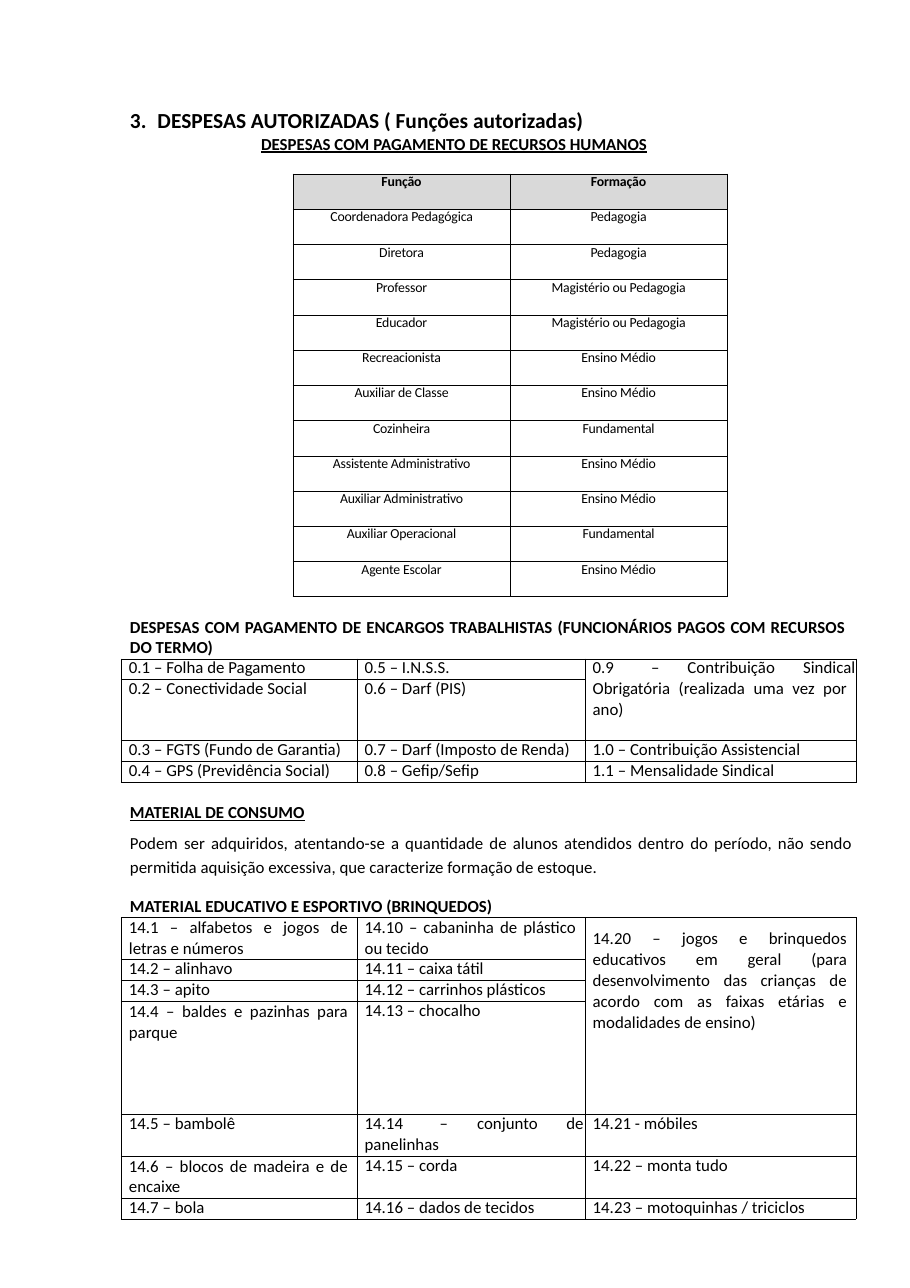
from lxml import etree
from pptx import Presentation
from pptx.dml.color import RGBColor
from pptx.enum.text import PP_ALIGN
from pptx.oxml.ns import qn
from pptx.util import Pt

EMU_PER_PX = 9144  # 100 px to the inch
LEFT, CENTER, JUSTIFY = PP_ALIGN.LEFT, PP_ALIGN.CENTER, PP_ALIGN.JUSTIFY
COLORS = {"text": "000000", "border": "000000", "header": "D9D9D9"}
FONT = "Calibri"
BORDER_WIDTH = Pt(0.5)

STAFF = [
    ("Função", "Formação"),
    ("Coordenadora Pedagógica", "Pedagogia"),
    ("Diretora", "Pedagogia"),
    ("Professor", "Magistério ou Pedagogia"),
    ("Educador", "Magistério ou Pedagogia"),
    ("Recreacionista", "Ensino Médio"),
    ("Auxiliar de Classe", "Ensino Médio"),
    ("Cozinheira", "Fundamental"),
    ("Assistente Administrativo", "Ensino Médio"),
    ("Auxiliar Administrativo", "Ensino Médio"),
    ("Auxiliar Operacional", "Fundamental"),
    ("Agente Escolar", "Ensino Médio"),
]

# A cell is a string, None when merged into the cell above,
# or a list of (text, format) paragraphs.
JUSTIFIED = {"align": JUSTIFY, "right": 8, "line": Pt(13.5)}
CHARGES = [
    ("0.1 – Folha de Pagamento", "0.5 – I.N.S.S.",
     [("0.9\t–\tContribuição\tSindical", {"tabs": (53, 86, 191)}),
      ("Obrigatória (realizada uma vez por ano)", JUSTIFIED)]),
    ("0.2 – Conectividade Social", "0.6 – Darf (PIS)", None),
    ("0.3 – FGTS (Fundo de Garantia)", "0.7 – Darf (Imposto de Renda)",
     "1.0 – Contribuição Assistencial"),
    ("0.4 – GPS (Previdência Social)", "0.8 – Gefip/Sefip",
     "1.1 – Mensalidade Sindical"),
]
TOYS = [
    ([("14.1 – alfabetos e jogos de letras e números", JUSTIFIED)],
     [("14.10 – cabaninha de plástico ou tecido", JUSTIFIED)],
     [("14.20 – jogos e brinquedos educativos em geral (para desenvolvimento "
       "das crianças de acordo com as faixas etárias e modalidades de ensino)",
       {**JUSTIFIED, "line": 1.02})]),
    ("14.2 – alinhavo", "14.11 – caixa tátil", None),
    ("14.3 – apito", "14.12 – carrinhos plásticos", None),
    ([("14.4 – baldes e pazinhas para parque", JUSTIFIED)],
     "14.13 – chocalho", None),
    ("14.5 – bambolê",
     [("14.14\t–\tconjunto\tde", {"tabs": (68, 102, 183)}),
      ("panelinhas", {"line": 1.0})],
     "14.21 - móbiles"),
    ([("14.6 – blocos de madeira e de encaixe", JUSTIFIED)],
     "14.15 – corda", "14.22 – monta tudo"),
    ("14.7 – bola", "14.16 – dados de tecidos", "14.23 – motoquinhas / triciclos"),
]


def px(length):
    return length * EMU_PER_PX


def add_para(frame, text, size=11, bold=False, underline=False, align=LEFT,
             left=0, right=0, line=None, before=None, spacing=0, tabs=()):
    """Fill the first paragraph of a frame if it is empty, else append one."""
    para = frame.paragraphs[0]
    if para.runs:
        para = frame.add_paragraph()
    properties = para._p.get_or_add_pPr()
    properties.set("marL", str(px(left)))
    properties.set("marR", str(px(right)))
    if tabs:
        stops = etree.SubElement(properties, qn("a:tabLst"))
        for position in tabs:
            etree.SubElement(stops, qn("a:tab"), pos=str(px(position)), algn="l")
    para.alignment = align
    para.line_spacing = line
    if before is not None:
        para.space_before = Pt(before)
    span = para.add_run()
    span.text = text
    span.font.name = FONT
    span.font.size = Pt(size)
    span.font.bold = bold
    span.font.underline = underline
    span.font.color.rgb = RGBColor.from_string(COLORS["text"])
    if spacing:
        span._r.get_or_add_rPr().set("spc", str(round(spacing * 100)))


def add_text_box(page, left, top, width, height, inset_top=1):
    box = page.shapes.add_textbox(px(left), px(top), px(width), px(height))
    frame = box.text_frame
    frame.word_wrap = True
    frame.margin_left = frame.margin_right = frame.margin_bottom = 0
    frame.margin_top = px(inset_top)
    return frame


def style_cell(cell, fill=None, inset_top=0):
    cell.margin_left = cell.margin_right = cell.margin_bottom = 0
    cell.margin_top = px(inset_top)
    properties = cell._tc.get_or_add_tcPr()
    for side in ("lnL", "lnR", "lnT", "lnB"):
        border = etree.SubElement(properties, qn(f"a:{side}"), w=str(BORDER_WIDTH))
        solid = etree.SubElement(border, qn("a:solidFill"))
        etree.SubElement(solid, qn("a:srgbClr"), val=COLORS["border"])
    if fill:
        cell.fill.solid()
        cell.fill.fore_color.rgb = RGBColor.from_string(fill)
    else:
        cell.fill.background()


def add_grid(page, left, top, columns, rows):
    """Add an unbanded table with the given column widths and row heights."""
    table = page.shapes.add_table(
        len(rows), len(columns), px(left), px(top),
        px(sum(columns)), px(sum(rows))).table
    table.first_row = table.horz_banding = False
    for column, width in zip(table.columns, columns):
        column.width = px(width)
    for row, height in zip(table.rows, rows):
        row.height = px(height)
    return table


def add_staff_table(page):
    table = add_grid(page, 266, 158, [197] * 2, [32] * len(STAFF))
    for row, texts in enumerate(STAFF):
        header = row == 0
        for column, text in enumerate(texts):
            cell = table.cell(row, column)
            style_cell(cell, COLORS["header"] if header else None)
            add_para(cell.text_frame, text, size=9, bold=header, align=CENTER,
                     line=Pt(10.6), spacing=-0.1)


def add_item_table(page, top, rows, items, merged_rows, merged_inset=0):
    """Add a three-column list whose last column starts with a merged cell."""
    table = add_grid(page, 110, top, (214, 207, 246), rows)
    last = len(table.columns) - 1
    table.cell(0, last).merge(table.cell(merged_rows - 1, last))
    for row, contents in enumerate(items):
        for column, content in enumerate(contents):
            cell = table.cell(row, column)
            style_cell(cell, inset_top=merged_inset if cell.is_merge_origin else 0)
            if content is None:
                continue
            paras = [(content, {})] if isinstance(content, str) else content
            for text, options in paras:
                add_para(cell.text_frame, text,
                         **{"left": 7, "line": Pt(12.8), **options})


def main():
    deck = Presentation()
    deck.slide_width, deck.slide_height = px(826), px(1169)
    page = deck.slides.add_slide(deck.slide_layouts[6])

    title = add_text_box(page, 117, 96, 474, 45)
    add_para(title, "3.\tDESPESAS AUTORIZADAS ( Funções autorizadas)",
             size=14, bold=True, left=1, tabs=(25,))
    add_para(title, "DESPESAS COM PAGAMENTO DE RECURSOS HUMANOS",
             bold=True, underline=True, left=120, before=0.5)
    add_staff_table(page)

    charges = add_text_box(page, 117, 558, 663, 40)
    add_para(charges, "DESPESAS COM PAGAMENTO DE ENCARGOS TRABALHISTAS "
             "(FUNCIONÁRIOS PAGOS COM RECURSOS DO TERMO)",
             bold=True, align=JUSTIFY, left=1, right=12, line=1.02)
    add_item_table(page, 598, (19, 37, 19, 19), CHARGES, merged_rows=2)

    supplies = add_text_box(page, 117, 717, 662, 116, inset_top=11)
    add_para(supplies, "MATERIAL DE CONSUMO", bold=True, underline=True, left=1)
    add_para(supplies, "Podem ser adquiridos, atentando-se a quantidade de alunos "
             "atendidos dentro do período, não sendo permitida aquisição excessiva, "
             "que caracterize formação de estoque.",
             align=JUSTIFY, left=1, right=5, line=1.18, before=4.5)
    add_para(supplies, "MATERIAL EDUCATIVO E ESPORTIVO (BRINQUEDOS)",
             bold=True, left=1, before=12.1)
    add_item_table(page, 833, (38, 19, 19, 38, 38, 38, 19), TOYS,
                   merged_rows=4, merged_inset=9)

    deck.save("out.pptx")


if __name__ == "__main__":
    main()
